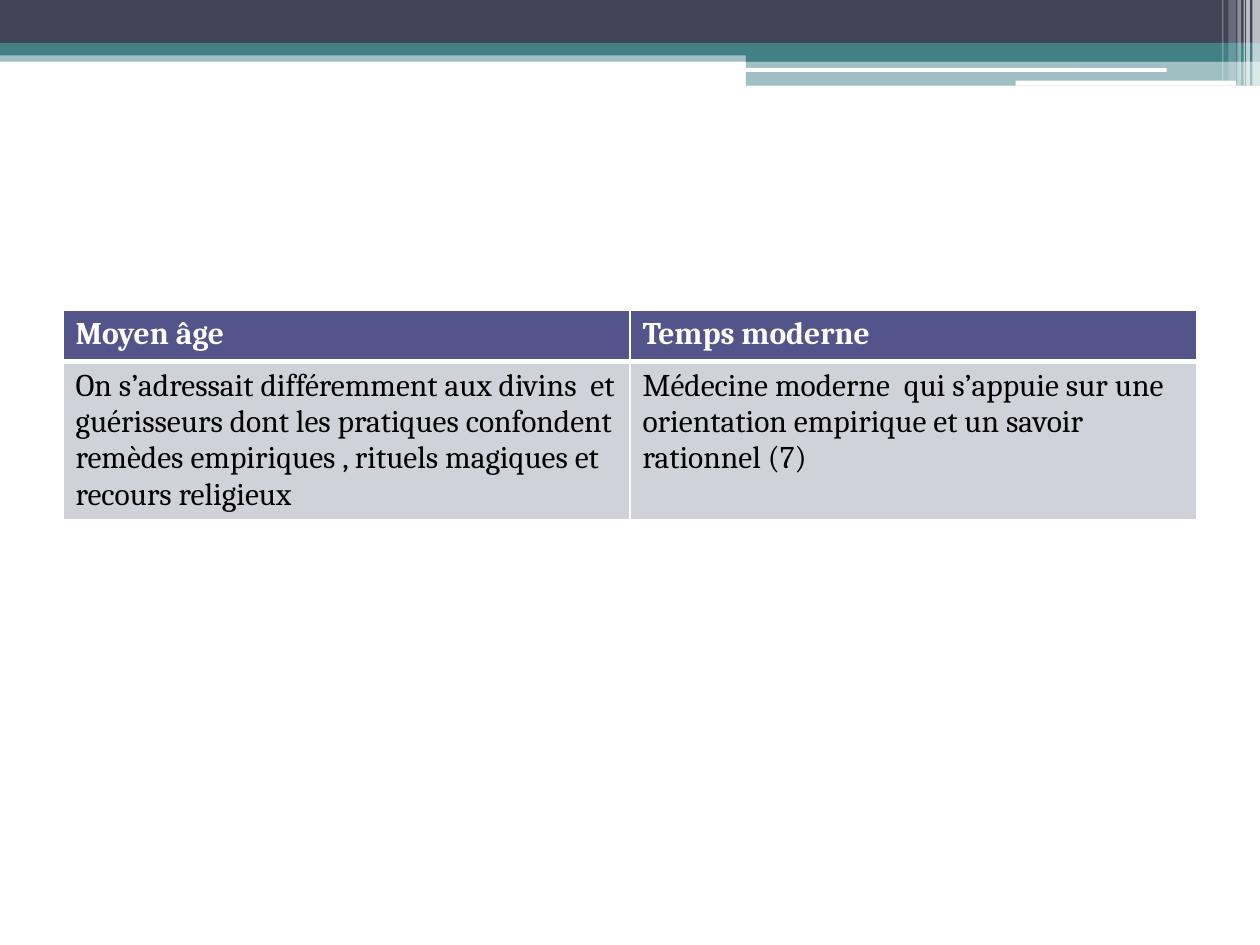
from lxml import etree
from pptx import Presentation
from pptx.dml.color import RGBColor
from pptx.enum.shapes import MSO_SHAPE
from pptx.oxml.ns import qn
from pptx.util import Inches, Pt

RECT, ROUND = MSO_SHAPE.RECTANGLE, MSO_SHAPE.ROUNDED_RECTANGLE
TEAL = RGBColor(0x43, 0x80, 0x86)
SLATE = RGBColor(0x42, 0x44, 0x56)
WHITE = RGBColor(0xFF, 0xFF, 0xFF)
BLACK = RGBColor(0, 0, 0)
INDIGO = RGBColor(0x53, 0x54, 0x8A)
LILAC = RGBColor(0xD1, 0xD1, 0xDA)

BANDS = [
    (RECT, 0, 0.4, 10, 0.09, TEAL, 50),
    (RECT, 0, 0, 10, 0.34, SLATE, 100),
    (RECT, 0, 0.34, 10, 0.1, TEAL, 100),
    (RECT, 5.92, 0.39, 4.08, 0.1, TEAL, 100),
    (RECT, 5.92, 0.48, 4.08, 0.2, TEAL, 50),
    (ROUND, 5.91, 0.54, 3.35, 0.03, WHITE, 100),
    (ROUND, 8.06, 0.64, 1.75, 0.04, WHITE, 100),
]
STRIPES = [
    (9.94, 0.06, 0.68, 65),
    (9.89, 0.03, 0.68, 65),
    (9.87, 0.01, 0.68, 60),
    (9.82, 0.03, 0.68, 40),
    (9.75, 0.06, 0.64, 20),
    (9.7, 0.01, 0.64, 30),
]
ROWS = [
    ("Moyen âge", "Temps moderne"),
    ("On s’adressait différemment aux divins  et guérisseurs dont les pratiques "
     "confondent remèdes empiriques , rituels magiques et recours religieux",
     "Médecine moderne  qui s’appuie sur une orientation empirique et un savoir "
     "rationnel (7)"),
]
HEADER = {"fill": INDIGO, "font": {"color": WHITE, "bold": True}, "bottom": 3}
BODY = {"fill": LILAC, "font": {"color": BLACK, "bold": False}, "bottom": 1}


def add_bar(s, kind, x, y, w, h, color, alpha):
    """Add one borderless bar with the given opacity in percent."""
    sp = s.shapes.add_shape(kind, Inches(x), Inches(y), Inches(w), Inches(h))
    sp.shadow.inherit = False
    sp.line.fill.background()
    sp.fill.solid()
    sp.fill.fore_color.rgb = color
    if alpha < 100:
        clr = sp.fill._xPr.find(".//" + qn("a:srgbClr"))
        etree.SubElement(clr, qn("a:alpha")).set("val", str(alpha * 1000))


def add_banner(s, x, y):
    """Draw the top bands and the stripes over their right end."""
    for kind, left, top, w, h, color, alpha in BANDS:
        add_bar(s, kind, x + left, y + top, w, h, color, alpha)
    for left, w, h, alpha in STRIPES:
        add_bar(s, RECT, x + left, y, w, h, WHITE, alpha)


def set_borders(cell, bottom):
    """Give a cell thin white borders and a bottom one of the given points."""
    tc_pr = cell._tc.get_or_add_tcPr()
    widths = {"lnL": 1, "lnR": 1, "lnT": 1, "lnB": bottom}
    for i, (tag, width) in enumerate(widths.items()):
        ln = etree.Element(qn("a:" + tag), w=str(Pt(width)))
        fill = etree.SubElement(ln, qn("a:solidFill"))
        etree.SubElement(fill, qn("a:srgbClr")).set("val", str(WHITE))
        tc_pr.insert(i, ln)


def fill_cell(cell, text, style):
    """Write a cell's text and apply its row's style."""
    cell.fill.solid()
    cell.fill.fore_color.rgb = style["fill"]
    r = cell.text_frame.paragraphs[0].add_run()
    r.text = text
    r.font.color.rgb = style["font"]["color"]
    for name, value in {"name": "Cambria", "size": Pt(18),
                        "bold": style["font"]["bold"]}.items():
        setattr(r.font, name, value)
    set_borders(cell, style["bottom"])


def add_comparison(s, x, y, w, row_h):
    """Add the table comparing the two periods."""
    table = s.shapes.add_table(len(ROWS), len(ROWS[0]), Inches(x), Inches(y),
                               Inches(w), Inches(row_h * len(ROWS))).table
    for i, (texts, style) in enumerate(zip(ROWS, (HEADER, BODY))):
        for j, text in enumerate(texts):
            fill_cell(table.cell(i, j), text, style)


def main():
    """Build and save the slide."""
    prs = Presentation()
    prs.slide_width, prs.slide_height = Inches(10), Inches(7.5)
    s = prs.slides.add_slide(prs.slide_layouts[6])
    add_banner(s, 0, 0)
    add_comparison(s, 0.5, 2.46, 9, 0.41)
    prs.save("out.pptx")


if __name__ == "__main__":
    main()
